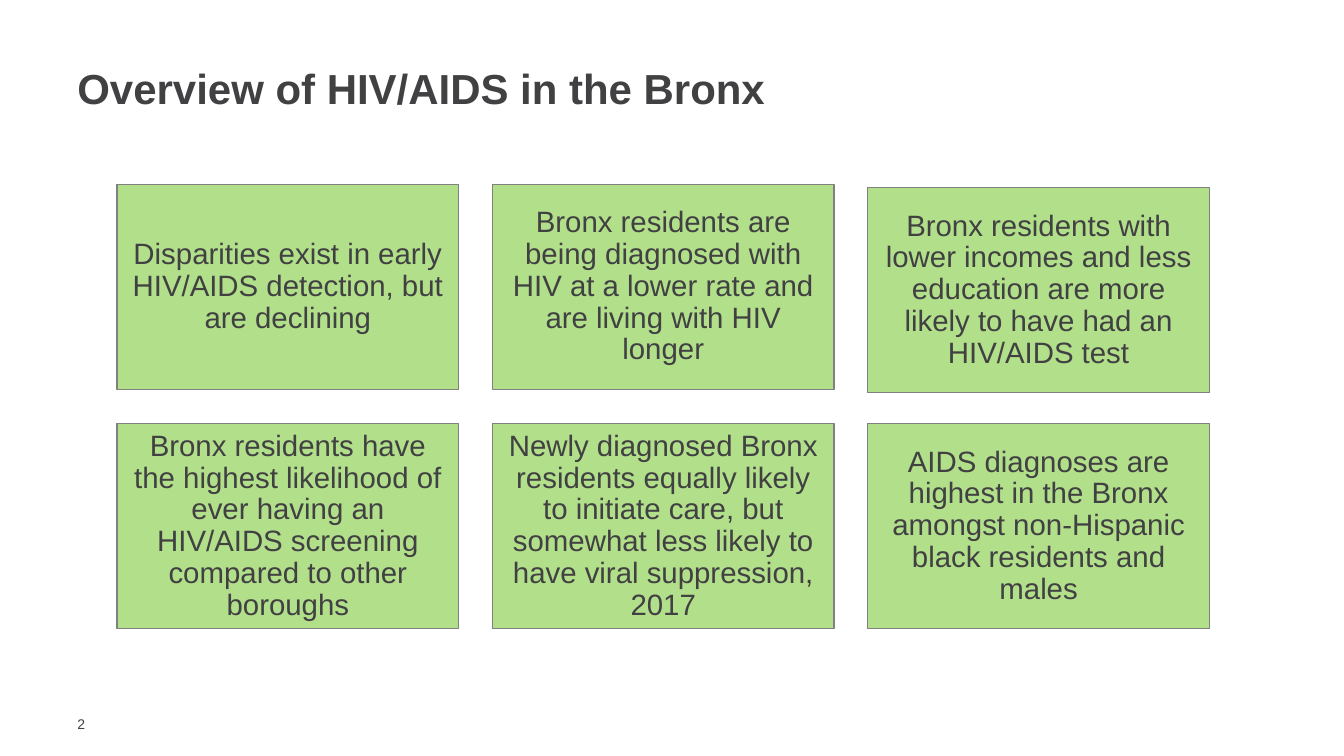
"""Build the overview slide on HIV/AIDS in the Bronx."""
import pptx
import pptx.dml.color
import pptx.enum.shapes
import pptx.enum.text
import pptx.util
from pptx.util import Cm

CHARCOAL = pptx.dml.color.RGBColor(0x41, 0x40, 0x42)
GREEN = pptx.dml.color.RGBColor(0xB2, 0xDF, 0x8A)
GREY = pptx.dml.color.RGBColor(0x80, 0x80, 0x80)

LEFT = pptx.enum.text.PP_ALIGN.LEFT
CENTER = pptx.enum.text.PP_ALIGN.CENTER


def write(holder, text, size, bold=False, align=LEFT, spacing=1.0, inset_x=0.25, inset_y=0.13):
    frame = holder.text_frame
    frame.word_wrap = True
    frame.vertical_anchor = pptx.enum.text.MSO_ANCHOR.MIDDLE
    frame.margin_left = frame.margin_right = Cm(inset_x)
    frame.margin_top = frame.margin_bottom = Cm(inset_y)
    paragraph = frame.paragraphs[0]
    paragraph.alignment = align
    paragraph.line_spacing = spacing
    run = paragraph.add_run()
    run.text = text
    run.font.name = "Arial"
    run.font.size = pptx.util.Pt(size)
    run.font.bold = bold
    run.font.color.rgb = CHARCOAL


deck = pptx.Presentation()
deck.slide_width = Cm(33.87)
deck.slide_height = Cm(19.05)
slide = deck.slides.add_slide(deck.slide_layouts[6])

page_number = slide.shapes.add_textbox(Cm(1.7), Cm(18.03), Cm(1.1), Cm(0.43))
write(page_number, "2", 10, inset_y=0)

title = slide.shapes.add_textbox(Cm(1.7), Cm(1.7), Cm(30.48), Cm(1.27))
write(title, "Overview of HIV/AIDS in the Bronx", 30, bold=True, spacing=0.8)

findings = [
    "Disparities exist in early HIV/AIDS detection, but are declining",
    "Bronx residents are being diagnosed with HIV at a lower rate and are living with HIV longer",
    "Bronx residents with lower incomes and less education are more likely to have had an HIV/AIDS test",
    "Bronx residents have the highest likelihood of ever having an HIV/AIDS screening compared to other boroughs",
    "Newly diagnosed Bronx residents equally likely to initiate care, but somewhat less likely to have viral suppression, 2017",
    "AIDS diagnoses are highest in the Bronx amongst non-Hispanic black residents and males",
]
INCOME_FINDING = 2
INCOME_DROP = 0.08

for index, finding in enumerate(findings):
    row, column = divmod(index, 3)
    top = 4.65 + 6.03 * row + (INCOME_DROP if index == INCOME_FINDING else 0)
    card = slide.shapes.add_shape(
        pptx.enum.shapes.MSO_SHAPE.RECTANGLE,
        Cm(2.95 + 9.46 * column), Cm(top), Cm(8.61), Cm(5.16))
    card.shadow.inherit = False
    card.fill.solid()
    card.fill.fore_color.rgb = GREEN
    card.line.color.rgb = GREY
    card.line.width = pptx.util.Pt(1)
    write(card, finding, 21, align=CENTER, spacing=0.9, inset_x=0.22, inset_y=0.22)

deck.save("out.pptx")
